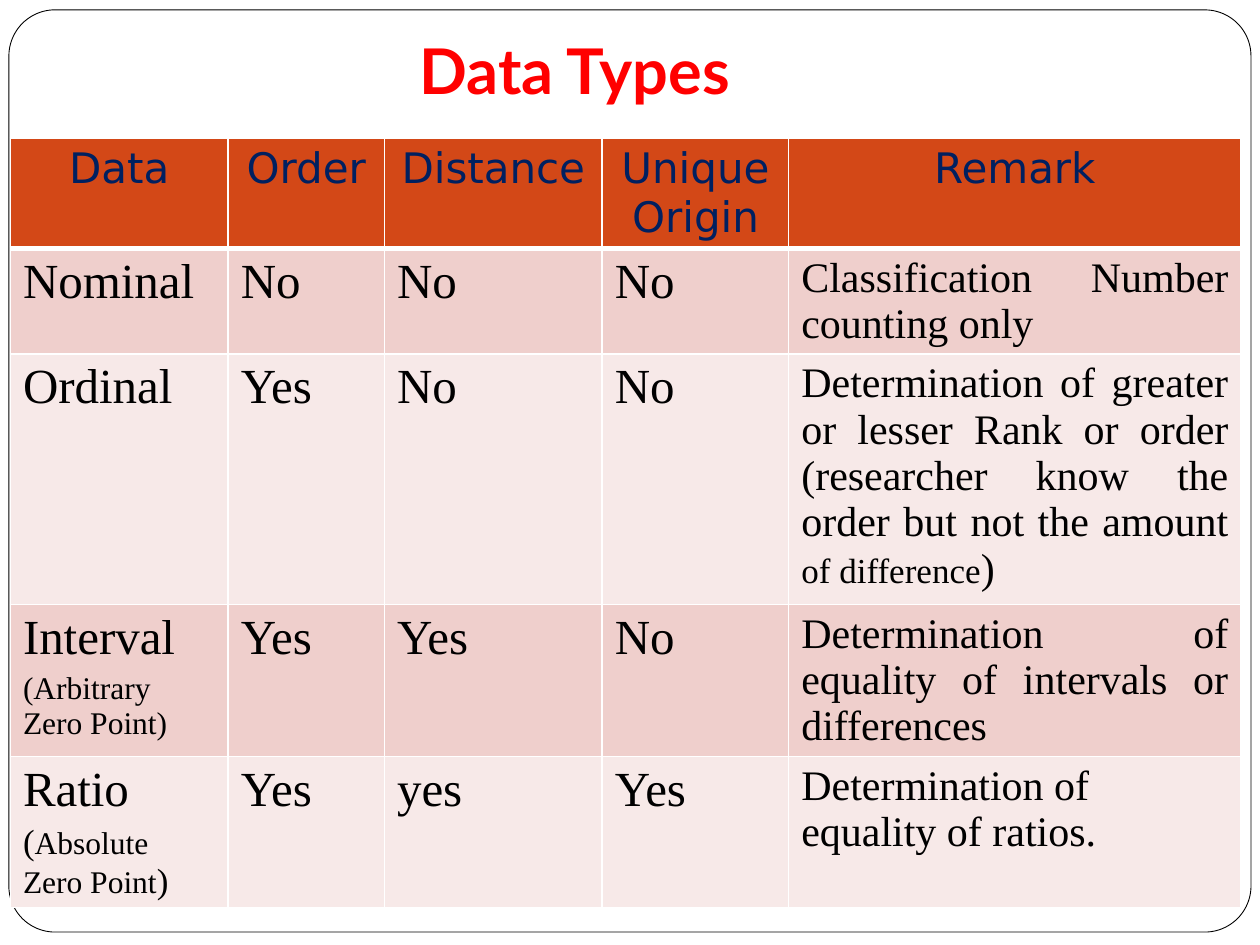
from lxml import etree
from pptx import Presentation
from pptx.dml.color import RGBColor
from pptx.enum import shapes, text
from pptx.oxml import ns
from pptx.util import Cm, Pt

RED = RGBColor(0xFF, 0x00, 0x00)
NAVY = RGBColor(0x00, 0x20, 0x60)
BLACK = RGBColor(0x00, 0x00, 0x00)
WHITE = RGBColor(0xFF, 0xFF, 0xFF)
ORANGE = RGBColor(0xD3, 0x48, 0x17)
BANDS = (RGBColor(0xEF, 0xCF, 0xCC), RGBColor(0xF7, 0xE9, 0xE8))

LEFT, CENTER, JUSTIFY = (text.PP_ALIGN.LEFT, text.PP_ALIGN.CENTER,
                         text.PP_ALIGN.JUSTIFY)

TITLE = "Data Types"
HEADINGS = ["Data", "Order", "Distance", "Unique Origin", "Remark"]
# A cell is a list of paragraphs, a paragraph a list of (text, size) runs.
SCALES = [
    {"name": [[("Nominal", 28)]],
     "answers": ["No", "No", "No"],
     "remark": [[("Classification Number counting only", 24)]]},
    {"name": [[("Ordinal", 28)]],
     "answers": ["Yes", "No", "No"],
     "remark": [[("Determination of greater or lesser Rank or order "
                  "(researcher know the order but not the amount ", 24),
                 ("of difference", 20), (")", 24)]]},
    {"name": [[("Interval", 28)], [("(Arbitrary Zero Point)", 18)]],
     "answers": ["Yes", "Yes", "No"],
     "remark": [[("Determination of equality of intervals or differences", 24)]]},
    {"name": [[("Ratio", 28)],
              [("(", 20), ("Absolute Zero Point", 18), (")", 20)]],
     "answers": ["Yes", "yes", "Yes"],
     "remark": [[("Determination of equality of ratios.", 24)]],
     "remark_align": LEFT},
]
COLUMN_WIDTHS = [4.39, 3.15, 4.39, 3.76, 9.12]
ROW_HEIGHTS = [2.16, 2.06, 5.05, 3.06, 3.05]


def write(frame, paragraphs, font="Times New Roman", color=BLACK, bold=False,
          align=LEFT):
    for index, runs in enumerate(paragraphs):
        paragraph = frame.add_paragraph() if index else frame.paragraphs[0]
        paragraph.alignment = align
        if index:
            paragraph.space_before = Pt(3.6)
        for words, size in runs:
            run = paragraph.add_run()
            run.text = words
            run.font.name = font
            run.font.size = Pt(size)
            run.font.bold = bold
            run.font.color.rgb = color


def style_cell(cell, fill, bottom=1):
    """Give the cell white borders and a solid fill."""
    properties = cell._tc.get_or_add_tcPr()
    for side, width in (("L", 1), ("R", 1), ("T", 1), ("B", bottom)):
        line = etree.SubElement(properties, ns.qn(f"a:ln{side}"), w=str(Pt(width)))
        solid = etree.SubElement(line, ns.qn("a:solidFill"))
        etree.SubElement(solid, ns.qn("a:srgbClr"), val=str(WHITE))
    cell.fill.solid()
    cell.fill.fore_color.rgb = fill


def add_title(slide):
    title = slide.shapes.title
    title.left, title.top, title.width, title.height = (
        Cm(0.79), Cm(0.58), Cm(21.59), Cm(1.83))
    frame = title.text_frame
    frame.auto_size = text.MSO_AUTO_SIZE.NONE
    frame.vertical_anchor = text.MSO_ANCHOR.BOTTOM
    frame.margin_bottom = Cm(0.25)
    write(frame, [[(TITLE, 36)]], font="Lato", color=RED, bold=True, align=CENTER)


def add_border(slide):
    border = slide.shapes.add_shape(
        shapes.MSO_SHAPE.ROUNDED_RECTANGLE, Cm(0.18), Cm(0.2), Cm(25.04), Cm(18.59))
    border.adjustments[0] = 0.05
    border.shadow.inherit = False
    border.fill.solid()
    border.fill.fore_color.rgb = WHITE
    border.line.color.rgb = BLACK
    border.line.width = Pt(0.5)
    slide.shapes.title.element.addprevious(border.element)


def add_scales(slide):
    table = slide.shapes.add_table(
        len(ROW_HEIGHTS), len(COLUMN_WIDTHS), Cm(0.21), Cm(2.78),
        Cm(sum(COLUMN_WIDTHS)), Cm(sum(ROW_HEIGHTS))).table
    for column, width in zip(table.columns, COLUMN_WIDTHS):
        column.width = Cm(width)
    for row, height in zip(table.rows, ROW_HEIGHTS):
        row.height = Cm(height)

    for column, heading in enumerate(HEADINGS):
        cell = table.cell(0, column)
        style_cell(cell, ORANGE, bottom=3)
        write(cell.text_frame, [[(heading, 24)]], font="DejaVu Sans", color=NAVY,
              align=CENTER)

    for row, scale in enumerate(SCALES, start=1):
        answers = [[[(answer, 28)]] for answer in scale["answers"]]
        contents = [scale["name"], *answers, scale["remark"]]
        aligns = [LEFT] * 4 + [scale.get("remark_align", JUSTIFY)]
        for column, (content, align) in enumerate(zip(contents, aligns)):
            cell = table.cell(row, column)
            style_cell(cell, BANDS[(row - 1) % 2])
            write(cell.text_frame, content, align=align)


def main():
    deck = Presentation()
    deck.slide_width, deck.slide_height = Cm(25.4), Cm(19.05)
    slide = deck.slides.add_slide(deck.slide_layouts[5])
    add_title(slide)
    add_border(slide)
    add_scales(slide)
    deck.save("out.pptx")


if __name__ == "__main__":
    main()
